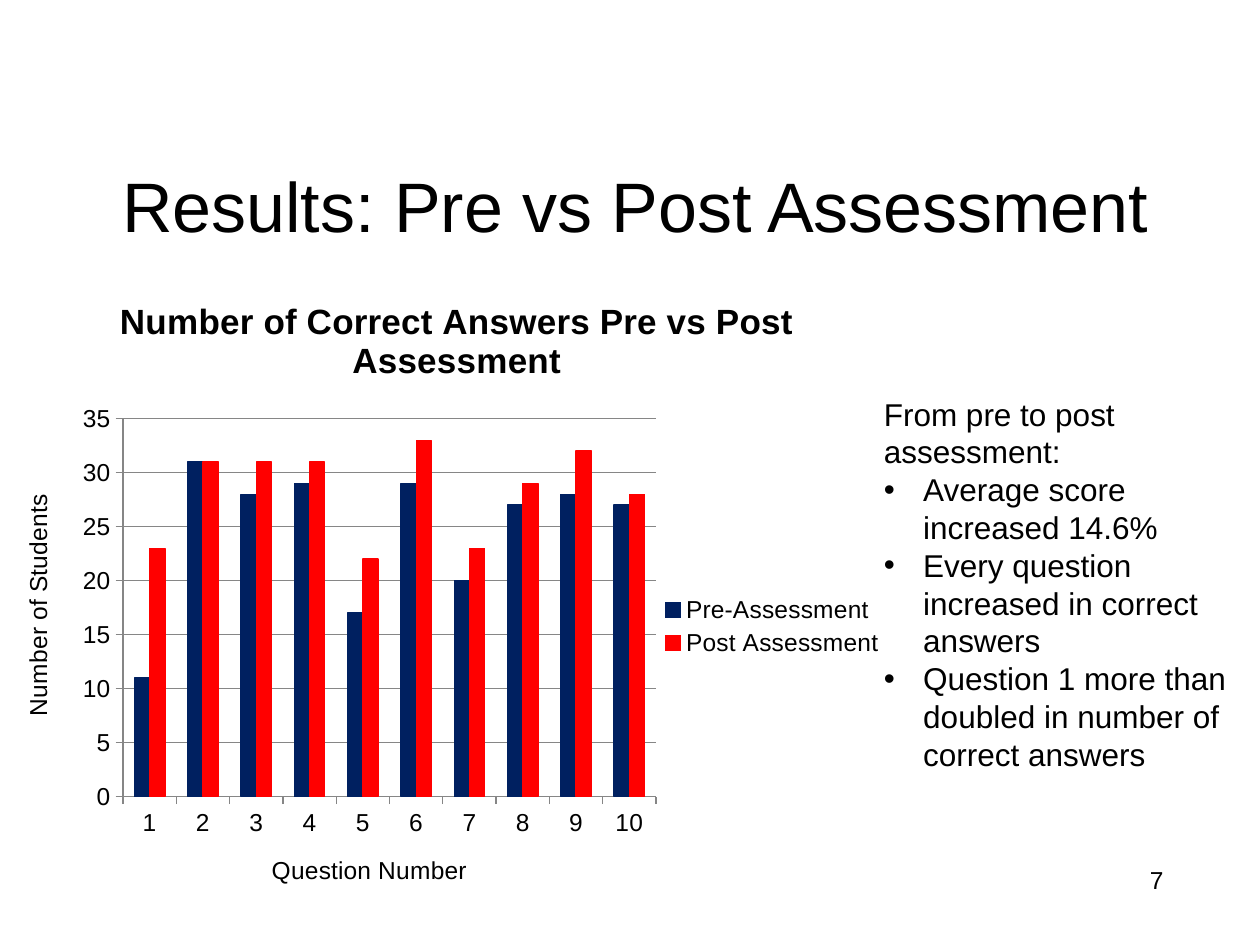
from lxml import etree
from pptx import Presentation
from pptx.chart.data import CategoryChartData
from pptx.dml.color import RGBColor
from pptx.enum.chart import XL_CHART_TYPE, XL_LEGEND_POSITION, XL_TICK_MARK
from pptx.enum.text import MSO_ANCHOR, PP_ALIGN
from pptx.oxml.ns import qn
from pptx.util import Pt

COLUMNS = XL_CHART_TYPE.COLUMN_CLUSTERED
LEGEND_RIGHT = XL_LEGEND_POSITION.RIGHT
TICK_OUT, TICK_NONE = XL_TICK_MARK.OUTSIDE, XL_TICK_MARK.NONE
TOP, MIDDLE = MSO_ANCHOR.TOP, MSO_ANCHOR.MIDDLE
LEFT, CENTER, RIGHT = PP_ALIGN.LEFT, PP_ALIGN.CENTER, PP_ALIGN.RIGHT

# Content
TITLE = "Results: Pre vs Post Assessment"
PAGE_NUMBER = "7"
FINDINGS_INTRO = "From pre to post assessment:"
FINDINGS = [
    "Average score increased 14.6%",
    "Every question increased in correct answers",
    "Question 1 more than doubled in number of correct answers",
]
CHART_TITLE = "Number of Correct Answers Pre vs Post Assessment"
QUESTION_AXIS, STUDENT_AXIS = "Question Number", "Number of Students"
QUESTIONS = [str(number) for number in range(1, 11)]
SCORES = {
    "Pre-Assessment": [11, 31, 28, 29, 17, 29, 20, 27, 28, 27],
    "Post Assessment": [23, 31, 31, 31, 22, 33, 23, 29, 32, 28],
}

THEME = {
    "font": "Arial",
    "text": RGBColor(0x00, 0x00, 0x00),
    "rule": RGBColor(0x86, 0x86, 0x86),
    "series": [RGBColor(0x00, 0x20, 0x60), RGBColor(0xFF, 0x00, 0x00)],
    "title": 40, "chart_title": 20, "findings": 18, "label": 14,
}

# Left, top, width, height in points
AREAS = {
    "title": (54, 72, 618, 90),
    "chart": (0, 156, 522, 366),
    "findings": (498, 222, 210, 225),
    "page": (558, 490.5, 114, 37.5),
}
BULLET_INDENT = 22.5

# Places inside the chart, in points from its corner
PLOT_AREA = (70.3, 83.3, 304.6, 216)
LEGEND_CORNER = (376, 182)
STUDENT_AXIS_CORNER = (10, 124)


def style_font(font, size, bold=False):
    values = {"name": THEME["font"], "size": Pt(size), "bold": bold}
    for attribute, value in values.items():
        setattr(font, attribute, value)
    font.color.rgb = THEME["text"]


def add_text(slide, area, lines, size, align=LEFT, anchor=TOP):
    """Add a text box; lines holds (text, bulleted) pairs."""
    frame = slide.shapes.add_textbox(*map(Pt, AREAS[area])).text_frame
    frame.word_wrap = True
    frame.vertical_anchor = anchor
    for index, (text, bulleted) in enumerate(lines):
        paragraph = frame.add_paragraph() if index else frame.paragraphs[0]
        paragraph.alignment = align
        if bulleted:
            properties = paragraph._p.get_or_add_pPr()
            properties.set("marL", str(Pt(BULLET_INDENT)))
            properties.set("indent", str(-Pt(BULLET_INDENT)))
            etree.SubElement(properties, qn("a:buFont"), typeface=THEME["font"])
            etree.SubElement(properties, qn("a:buChar"), char="•")
        run = paragraph.add_run()
        run.text = text
        style_font(run.font, size)


def set_caption(owner, text, size, bold=False):
    """Give a chart or an axis its title."""
    frame = (owner.chart_title if hasattr(owner, "chart_title")
             else owner.axis_title).text_frame
    frame.text = text
    style_font(frame.paragraphs[0].runs[0].font, size, bold)


def place(element, position):
    """Fix a chart part at (left, top) or (left, top, width, height)."""
    for old_layout in element.findall(qn("c:layout")):
        element.remove(old_layout)
    layout = etree.Element(qn("c:layout"))
    manual = etree.SubElement(layout, qn("c:manualLayout"))
    settings = [("xMode", "edge"), ("yMode", "edge")]
    if len(position) == 4:
        settings.insert(0, ("layoutTarget", "inner"))
    chart_size = AREAS["chart"][2:] * 2
    settings += [(key, f"{length / whole:.4f}")
                 for key, length, whole in zip("xywh", position, chart_size)]
    for key, value in settings:
        etree.SubElement(manual, qn(f"c:{key}"), val=value)
    overlay = element.find(qn("c:overlay"))
    if overlay is None:
        element.insert(0, layout)
    else:
        overlay.addprevious(layout)


def add_score_chart(slide):
    data = CategoryChartData()
    data.categories = QUESTIONS
    for name, values in SCORES.items():
        data.add_series(name, values)
    chart = slide.shapes.add_chart(COLUMNS, *map(Pt, AREAS["chart"]), data).chart
    style_font(chart.font, THEME["label"])
    set_caption(chart, CHART_TITLE, THEME["chart_title"], bold=True)

    # Axes
    axes = {QUESTION_AXIS: chart.category_axis, STUDENT_AXIS: chart.value_axis}
    for caption, axis in axes.items():
        set_caption(axis, caption, THEME["label"])
        style_font(axis.tick_labels.font, THEME["label"])
        axis.major_tick_mark, axis.minor_tick_mark = TICK_OUT, TICK_NONE
        axis.format.line.color.rgb = THEME["rule"]
    students = chart.value_axis
    scale = {"minimum_scale": 0, "maximum_scale": 35, "major_unit": 5,
             "has_major_gridlines": True}
    for attribute, value in scale.items():
        setattr(students, attribute, value)
    students.major_gridlines.format.line.color.rgb = THEME["rule"]

    # Legend, kept between the plot and the findings
    chart.has_legend = True
    chart.legend.position = LEGEND_RIGHT
    chart.legend.include_in_layout = False
    style_font(chart.legend.font, THEME["label"])

    # Places
    place(chart._chartSpace.chart.plotArea, PLOT_AREA)
    place(chart.legend._element, LEGEND_CORNER)
    place(students.axis_title._element, STUDENT_AXIS_CORNER)

    # Columns
    plot = chart.plots[0]
    plot.gap_width, plot.overlap, plot.vary_by_categories = 150, 0, False
    for series, color in zip(plot.series, THEME["series"]):
        series.format.fill.solid()
        series.format.fill.fore_color.rgb = color
        series.format.line.color.rgb = color
        series.format.line.width = Pt(0.75)


def main():
    deck = Presentation()
    deck.slide_width, deck.slide_height = Pt(720), Pt(540)
    slide = deck.slides.add_slide(deck.slide_layouts[6])

    add_text(slide, "title", [(TITLE, False)], THEME["title"], CENTER, MIDDLE)
    add_text(slide, "page", [(PAGE_NUMBER, False)], THEME["label"], RIGHT)
    add_score_chart(slide)
    findings = [(FINDINGS_INTRO, False)] + [(text, True) for text in FINDINGS]
    add_text(slide, "findings", findings, THEME["findings"])

    deck.save("out.pptx")


if __name__ == "__main__":
    main()
